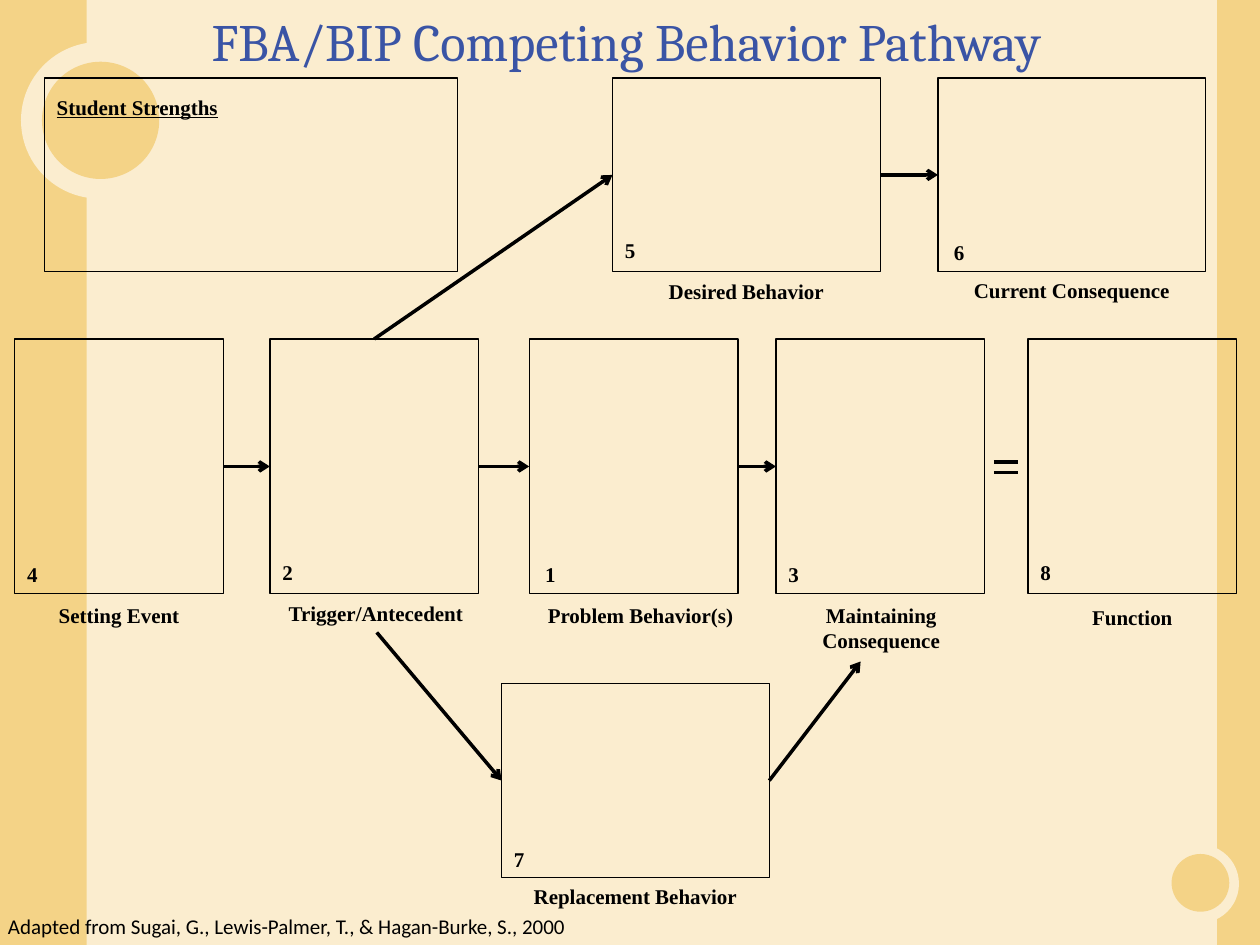
from lxml.etree import SubElement
from pptx import Presentation
from pptx.dml.color import RGBColor
from pptx.enum.shapes import MSO_CONNECTOR, MSO_SHAPE
from pptx.enum.text import PP_ALIGN
from pptx.oxml.ns import qn
from pptx.util import Pt

SAND, CREAM, BLACK, BLUE = "F4D387", "FBEDCF", "000000", "3A54A5"
SERIF = "Times New Roman"


def color(hex_string):
    return RGBColor.from_string(hex_string)


def add_text(text, left, top, width, height=21.6, font="Times New Roman",
             size=12, bold=True, ink=BLACK, align=PP_ALIGN.LEFT):
    frame = slide.shapes.add_textbox(Pt(left), Pt(top), Pt(width), Pt(height)).text_frame
    frame.word_wrap = True
    paragraph = frame.paragraphs[0]
    paragraph.text = text
    paragraph.alignment = align
    paragraph.font.name = font
    paragraph.font.size = Pt(size)
    paragraph.font.bold = bold
    paragraph.font.color.rgb = color(ink)
    return paragraph


prs = Presentation()
prs.slide_width, prs.slide_height = Pt(720), Pt(540)
slide = prs.slides.add_slide(prs.slide_layouts[6])
slide.background.fill.solid()
slide.background.fill.fore_color.rgb = color(CREAM)

# Side bands and ringed discs
for kind, fill, left, top, width, height in [
    (MSO_SHAPE.RECTANGLE, SAND, 695.5, 0, 24.5, 540),
    (MSO_SHAPE.RECTANGLE, SAND, 0, 0, 49.5, 540),
    (MSO_SHAPE.OVAL, CREAM, 12, 24, 89.5, 89.5),
    (MSO_SHAPE.OVAL, SAND, 24, 35.3, 67, 67),
    (MSO_SHAPE.OVAL, CREAM, 663, 482.5, 45, 45),
    (MSO_SHAPE.OVAL, SAND, 669.5, 488, 33, 33),
]:
    decoration = slide.shapes.add_shape(kind, Pt(left), Pt(top), Pt(width), Pt(height))
    decoration.shadow.inherit = False
    decoration.fill.solid()
    decoration.fill.fore_color.rgb = color(fill)
    decoration.line.fill.background()

# Boxes: name, number, left, top, width, height,
# then number shift (x, y) and label shift (x, y)
MIDDLE = (193.7, 119.3, 145.7)
OUTER = (153, 110.7)
boxes = {}
for name, number, left, top, width, height, number_shift, label_shift in [
    ("Setting Event", "4", 8.4, *MIDDLE, (0, 0), (0, 0)),
    ("Trigger/Antecedent", "2", 154.2, *MIDDLE, (0, -1.4), (1, -1)),
    ("Problem Behavior(s)", "1", 302.4, *MIDDLE, (2, 0), (4, 0)),
    ("Maintaining Consequence", "3", 443.4, *MIDDLE, (0, 0), (0.5, 0)),
    ("Function", "8", 587.4, *MIDDLE, (0, -1.4), (0, 1.2)),
    ("Desired Behavior", "5", 350, 44.6, *OUTER, (0, -1), (0, -1)),
    ("Current Consequence", "6", 536, 44.6, *OUTER, (2, 0), (0, -1.4)),
    ("Replacement Behavior", "7", 286.6, 390.7, *OUTER, (0, 0.8), (0, -1)),
    ("Student Strengths", "", 25.3, 44.6, 236, 110.7, None, None),
]:
    box = slide.shapes.add_shape(MSO_SHAPE.RECTANGLE, Pt(left), Pt(top), Pt(width), Pt(height))
    box.shadow.inherit = False
    box.fill.background()
    box.line.color.rgb = color(BLACK)
    box.line.width = Pt(0.75)
    boxes[name] = box
    bottom = top + height
    if number:
        add_text(number, left + number_shift[0], bottom - 21.8 + number_shift[1], 26)
        label_width = 142
        add_text(name, left + (width - label_width) / 2 + label_shift[0],
                 bottom + 1.2 + label_shift[1], label_width, align=PP_ALIGN.CENTER)
    else:
        add_text(name, left, top + 5.8, 172).font.underline = True

# Arrows: each end is (box, side) or a free point; then the equals sign
TOP, LEFT, RIGHT = 0, 1, 3
for start, end, has_head in [
    (("Setting Event", RIGHT), ("Trigger/Antecedent", LEFT), True),
    (("Trigger/Antecedent", RIGHT), ("Problem Behavior(s)", LEFT), True),
    (("Problem Behavior(s)", RIGHT), ("Maintaining Consequence", LEFT), True),
    (("Trigger/Antecedent", TOP), ("Desired Behavior", LEFT), True),
    (("Desired Behavior", RIGHT), ("Current Consequence", LEFT), True),
    ((215.3, 361.4), ("Replacement Behavior", LEFT), True),
    (("Replacement Behavior", RIGHT), (491.8, 378), True),
    ((568, 264), (582, 264), False),
    ((568, 270), (582, 270), False),
]:
    points = [(0, 0) if end_point[0] in boxes else end_point for end_point in (start, end)]
    arrow = slide.shapes.add_connector(
        MSO_CONNECTOR.STRAIGHT, *[Pt(value) for point in points for value in point])
    if start[0] in boxes:
        arrow.begin_connect(boxes[start[0]], start[1])
    if end[0] in boxes:
        arrow.end_connect(boxes[end[0]], end[1])
    arrow.line.color.rgb = color(BLACK)
    arrow.line.width = Pt(2)
    if has_head:
        SubElement(arrow.line._get_or_add_ln(), qn("a:tailEnd"), type="arrow")
    SubElement(arrow._element.spPr, qn("a:effectLst"))

# Title and credit
add_text("FBA/BIP Competing Behavior Pathway", 11.5, 1.5, 693, 44, font="Cambria",
         size=30, bold=False, ink=BLUE, align=PP_ALIGN.CENTER)
add_text("Adapted from Sugai, G., Lewis-Palmer, T., & Hagan-Burke, S., 2000",
         -2.5, 518.5, 402, font="Calibri", bold=False)

prs.save("out.pptx")
